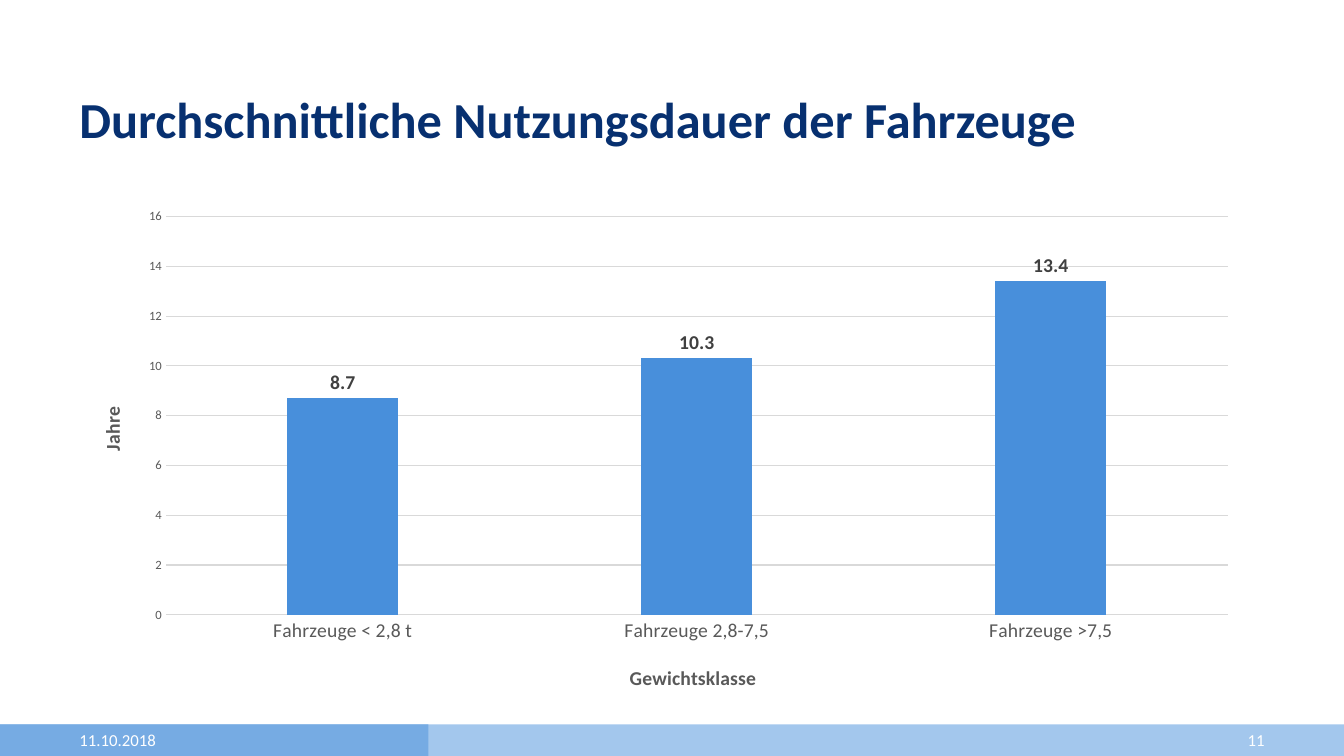
from dataclasses import dataclass

from lxml import etree
from pptx import Presentation
from pptx.chart.data import CategoryChartData
from pptx.dml.color import RGBColor
from pptx.enum.chart import XL_CHART_TYPE, XL_LABEL_POSITION, XL_TICK_MARK
from pptx.enum.shapes import MSO_SHAPE
from pptx.enum.text import MSO_ANCHOR, PP_ALIGN
from pptx.oxml.ns import qn
from pptx.util import Pt

COLUMNS = XL_CHART_TYPE.COLUMN_CLUSTERED
OUTSIDE = XL_LABEL_POSITION.OUTSIDE_END
NO_TICK = XL_TICK_MARK.NONE
RECTANGLE = MSO_SHAPE.RECTANGLE
TOP, MIDDLE = MSO_ANCHOR.TOP, MSO_ANCHOR.MIDDLE
LEFT, RIGHT = PP_ALIGN.LEFT, PP_ALIGN.RIGHT

HEADING = "Durchschnittliche Nutzungsdauer der Fahrzeuge"
SERVICE_YEARS = {
    "Fahrzeuge < 2,8 t": 8.7,
    "Fahrzeuge 2,8-7,5": 10.3,
    "Fahrzeuge >7,5": 13.4,
}
WEIGHT_TITLE = "Gewichtsklasse"
YEARS_TITLE = "Jahre"
FOOTER = [("11.10.2018", LEFT), ("11", RIGHT)]

SLIDE_W, SLIDE_H = 960, 540
MARGIN = 56.7
FOOTER_H = 22.5
FOOTER_TOP = SLIDE_H - FOOTER_H
FOOTER_TEXT_W = 216
DATE_BAND_W = 306
CHART_BOX = (51, 144, 843, 360)
PLOT_LAYOUT = {"x": 0.08, "y": 0.03, "w": 0.9, "h": 0.79}
WEIGHT_LAYOUT = {"x": 0.47, "y": 0.91}
YEARS_LAYOUT = {"x": 0.02, "y": 0.4}


@dataclass(frozen=True)
class Theme:
    font: str = "Calibri"
    heading: str = "073070"
    footer_band: str = "A3C7ED"
    date_band: str = "76ABE3"
    footer_text: str = "FFFFFF"
    column: str = "488FDB"
    axis: str = "595959"
    grid: str = "D9D9D9"
    label: str = "404040"
    heading_size: int = 36
    footer_size: int = 12
    chart_size: int = 10
    label_size: int = 14
    scale_size: int = 9


THEME = Theme()


def set_font(font, size, color, bold=False):
    font.name = THEME.font
    font.size = Pt(size)
    font.bold = bold
    font.color.rgb = RGBColor.from_string(color)


def clear_insets(frame, anchor):
    frame.margin_left = frame.margin_right = 0
    frame.margin_top = frame.margin_bottom = 0
    frame.vertical_anchor = anchor
    frame.word_wrap = True


def place(shape, left, top, width, height):
    shape.left, shape.top = Pt(left), Pt(top)
    shape.width, shape.height = Pt(width), Pt(height)


def add_band(slide, width, color):
    band = slide.shapes.add_shape(RECTANGLE, 0, Pt(FOOTER_TOP), Pt(width), Pt(FOOTER_H))
    band.shadow.inherit = False
    band.fill.solid()
    band.fill.fore_color.rgb = RGBColor.from_string(color)
    band.line.fill.background()


def add_footer(slide):
    add_band(slide, SLIDE_W, THEME.footer_band)
    add_band(slide, DATE_BAND_W, THEME.date_band)
    for text, align in FOOTER:
        left = MARGIN if align == LEFT else SLIDE_W - MARGIN - FOOTER_TEXT_W
        box = slide.shapes.add_textbox(Pt(left), Pt(FOOTER_TOP), Pt(FOOTER_TEXT_W), Pt(FOOTER_H))
        clear_insets(box.text_frame, MIDDLE)
        line = box.text_frame.paragraphs[0]
        line.text = text
        line.alignment = align
        set_font(line.font, THEME.footer_size, THEME.footer_text)


def add_heading(slide):
    heading = slide.shapes.title
    place(heading, MARGIN, 67.7, SLIDE_W - 2 * MARGIN, 75.6)
    clear_insets(heading.text_frame, TOP)
    line = heading.text_frame.paragraphs[0]
    line.text = HEADING
    line.alignment = LEFT
    line.line_spacing = 0.9
    set_font(line.font, THEME.heading_size, THEME.heading, True)


def set_layout(parent, position, fractions, inner=False):
    for old in parent.findall(qn("c:layout")):
        parent.remove(old)
    layout = etree.Element(qn("c:layout"))
    manual = etree.SubElement(layout, qn("c:manualLayout"))
    settings = [("layoutTarget", "inner")] if inner else []
    settings += [("xMode", "edge"), ("yMode", "edge"), *fractions.items()]
    for tag, value in settings:
        etree.SubElement(manual, qn(f"c:{tag}")).set("val", str(value))
    parent.insert(position, layout)


def format_axis(axis, title, size, fractions):
    axis.major_tick_mark = axis.minor_tick_mark = NO_TICK
    set_font(axis.tick_labels.font, size, THEME.axis)
    frame = axis.axis_title.text_frame
    frame.text = title
    set_font(frame.paragraphs[0].font, THEME.label_size, THEME.axis, True)
    set_layout(axis.axis_title._element, 1, fractions)


def format_rule(line):
    line.color.rgb = RGBColor.from_string(THEME.grid)
    line.width = Pt(0.75)


def add_years_chart(slide):
    years = CategoryChartData()
    years.categories = list(SERVICE_YEARS)
    years.add_series("Series 1", list(SERVICE_YEARS.values()))
    chart = slide.shapes.add_chart(COLUMNS, *map(Pt, CHART_BOX), years).chart
    chart.has_legend = chart.has_title = False
    set_font(chart.font, THEME.chart_size, "000000")

    weights, scale = chart.category_axis, chart.value_axis
    format_axis(weights, WEIGHT_TITLE, THEME.label_size, WEIGHT_LAYOUT)
    format_axis(scale, YEARS_TITLE, THEME.scale_size, YEARS_LAYOUT)
    format_rule(weights.format.line)
    format_rule(scale.major_gridlines.format.line)
    scale.format.line.fill.background()
    scale.minimum_scale, scale.maximum_scale, scale.major_unit = 0, 16, 2
    years_body = scale.axis_title.text_frame._txBody.find(qn("a:bodyPr"))
    years_body.set("rot", "-5400000")
    years_body.set("vert", "horz")

    plot = chart.plots[0]
    plot.vary_by_categories = False
    plot.gap_width, plot.overlap = 219, -27
    columns = plot.series[0]
    columns.format.fill.solid()
    columns.format.fill.fore_color.rgb = RGBColor.from_string(THEME.column)
    labels = columns.data_labels
    labels.show_value = True
    labels.position = OUTSIDE
    set_font(labels.font, THEME.label_size, THEME.label, True)
    set_layout(chart._chartSpace.chart.plotArea, 0, PLOT_LAYOUT, inner=True)


def main():
    deck = Presentation()
    deck.slide_width, deck.slide_height = Pt(SLIDE_W), Pt(SLIDE_H)
    slide = deck.slides.add_slide(deck.slide_layouts[5])
    add_footer(slide)
    add_heading(slide)
    add_years_chart(slide)
    deck.save("out.pptx")


if __name__ == "__main__":
    main()
